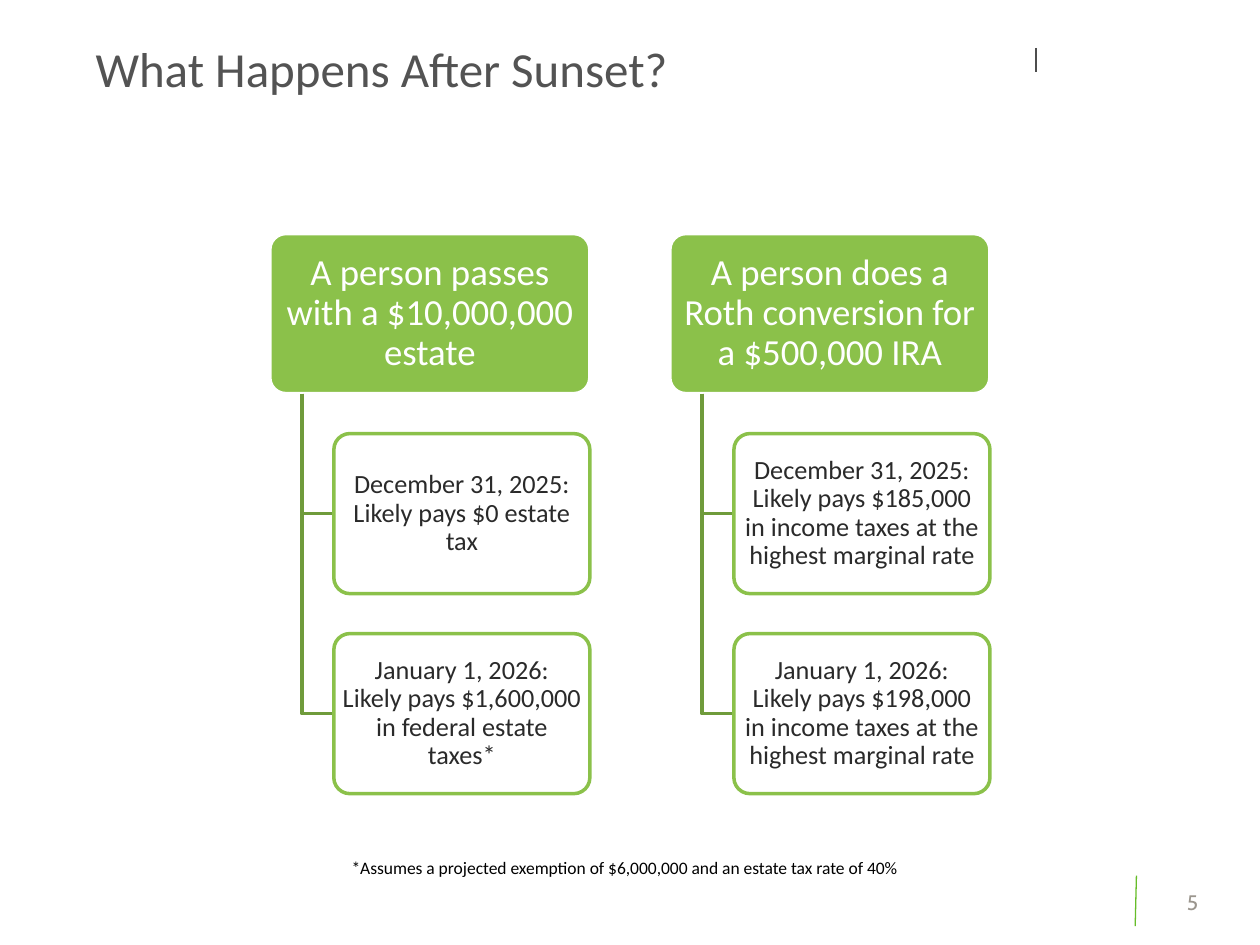
from dataclasses import dataclass

from lxml import etree
from pptx import Presentation
from pptx.dml.color import RGBColor
from pptx.enum import shapes, text
from pptx.oxml.ns import qn
from pptx.util import Pt


@dataclass(frozen=True)
class Theme:
    font: str = "Calibri"
    number_font: str = "Cabin"
    title: str = "535353"
    green: str = "8BC14A"
    branch: str = "6F9B3B"
    accent: str = "66BD29"
    rule: str = "4E4E4E"
    body: str = "2A2A2A"
    number: str = "9B968E"
    note: str = "000000"
    white: str = "FFFFFF"
    title_size: float = 28
    head_size: float = 21
    body_size: float = 15
    number_size: float = 12
    note_size: float = 10
    outline: float = 2
    hairline: float = 0.75


@dataclass(frozen=True)
class Box:
    left: float
    top: float
    width: float
    height: float

    def points(self) -> tuple:
        return tuple(Pt(v) for v in (self.left, self.top, self.width, self.height))


@dataclass(frozen=True)
class Style:
    size: float
    color: str
    font: str = Theme.font
    align: text.PP_ALIGN = text.PP_ALIGN.CENTER
    anchor: text.MSO_ANCHOR = text.MSO_ANCHOR.TOP
    spacing: float = 1.0
    inset_x: float = 3.6
    inset_y: float = 3.6
    wrap: bool = False


@dataclass(frozen=True)
class Scenario:
    heading: str
    outcomes: tuple[str, ...]


THEME = Theme()
MIDDLE = text.MSO_ANCHOR.MIDDLE
TITLE = Style(THEME.title_size, THEME.title, align=text.PP_ALIGN.LEFT,
              spacing=0.9, inset_x=7.2, wrap=True)
HEAD = Style(THEME.head_size, THEME.white, anchor=MIDDLE, spacing=0.9,
             inset_x=2.9, inset_y=2, wrap=True)
OUTCOME = Style(THEME.body_size, THEME.body, anchor=MIDDLE, spacing=0.9,
                inset_x=2.1, inset_y=1.4, wrap=True)
NUMBER = Style(THEME.number_size, THEME.number, font=THEME.number_font)
NOTE = Style(THEME.note_size, THEME.note, align=text.PP_ALIGN.LEFT)

# The tree is proportioned from the size of its first heading.
FIRST_HEAD = Box(154.2, 133.5, 182.88, 91.44)
PITCH = 1.25
BRANCH_INDENT = 0.1
OUTCOME_INDENT = 0.2

SCENARIOS = (
    Scenario("A person passes with a $10,000,000 estate", (
        "December 31, 2025:\vLikely pays $0 estate tax",
        "January 1, 2026:\vLikely pays $1,600,000 in federal estate taxes*",
    )),
    Scenario("A person does a Roth conversion for a $500,000 IRA", (
        "December 31, 2025:\vLikely pays $185,000 in income taxes at the highest marginal rate",
        "January 1, 2026:\vLikely pays $198,000 in income taxes at the highest marginal rate",
    )),
)


def rgb(color: str) -> RGBColor:
    return RGBColor.from_string(color)


def write(shape, words: str, style: Style) -> None:
    frame = shape.text_frame
    frame_format = {
        "word_wrap": style.wrap, "vertical_anchor": style.anchor,
        "margin_left": Pt(style.inset_x), "margin_right": Pt(style.inset_x),
        "margin_top": Pt(style.inset_y), "margin_bottom": Pt(style.inset_y),
    }
    for name, value in frame_format.items():
        setattr(frame, name, value)
    paragraph = frame.paragraphs[0]
    paragraph.text = words
    paragraph.alignment = style.align
    paragraph.line_spacing = style.spacing
    for run in paragraph.runs:
        for name, value in {"size": Pt(style.size), "name": style.font}.items():
            setattr(run.font, name, value)
        run.font.color.rgb = rgb(style.color)


def stroke(shape, color: str, width: float) -> None:
    shape.line.color.rgb = rgb(color)
    shape.line.width = Pt(width)


def add_label(slide, box: Box, words: str, style: Style) -> None:
    write(slide.shapes.add_textbox(*box.points()), words, style)


def add_card(slide, box: Box, words: str, style: Style, fill: str, line: str,
             opacity: int = 100) -> None:
    card = slide.shapes.add_shape(shapes.MSO_SHAPE.ROUNDED_RECTANGLE, *box.points())
    card.adjustments[0] = 0.1
    card.shadow.inherit = False
    card.fill.solid()
    card.fill.fore_color.rgb = rgb(fill)
    if opacity < 100:
        color = card.fill._xPr.find(f".//{qn('a:srgbClr')}")
        etree.SubElement(color, qn("a:alpha"), val=str(opacity * 1000))
    stroke(card, line, THEME.outline)
    write(card, words, style)


def add_branch(slide, x: float, top: float, bottom: float, end_x: float) -> None:
    """Draw an open elbow down from a heading and across to an outcome."""
    builder = slide.shapes.build_freeform(Pt(x), Pt(top))
    builder.add_line_segments([(Pt(x), Pt(bottom)), (Pt(end_x), Pt(bottom))], close=False)
    elbow = builder.convert_to_shape()
    elbow.shadow.inherit = False
    elbow.fill.background()
    stroke(elbow, THEME.branch, THEME.outline)


def add_rule(slide, start: tuple[float, float], end: tuple[float, float], color: str) -> None:
    rule = slide.shapes.add_connector(
        shapes.MSO_CONNECTOR.STRAIGHT, *(Pt(v) for v in start + end))
    stroke(rule, color, THEME.hairline)
    etree.SubElement(rule._element.spPr, qn("a:effectLst"))


def add_scenario(slide, scenario: Scenario, head: Box) -> None:
    add_card(slide, head, scenario.heading, HEAD, THEME.green, THEME.white)
    indent = OUTCOME_INDENT * head.width
    for row, words in enumerate(scenario.outcomes, start=1):
        outcome = Box(head.left + indent, head.top + row * PITCH * head.height,
                      head.width - indent, head.height)
        add_branch(slide, head.left + BRANCH_INDENT * head.width, head.top + head.height,
                   outcome.top + outcome.height / 2, outcome.left)
        add_card(slide, outcome, words, OUTCOME, THEME.white, THEME.green, opacity=90)


def main() -> None:
    deck = Presentation()
    deck.slide_width, deck.slide_height = Pt(720), Pt(540)
    slide = deck.slides.add_slide(deck.slide_layouts[6])

    add_rule(slide, (592, 27.4), (592, 41), THEME.rule)
    add_rule(slide, (649.4, 500.4), (648.7, 529.2), THEME.accent)
    add_label(slide, Box(47.5, 22.3, 650, 89.3), "What Happens After Sunset?", TITLE)
    for column, scenario in enumerate(SCENARIOS):
        left = FIRST_HEAD.left + column * PITCH * FIRST_HEAD.width
        add_scenario(slide, scenario,
                     Box(left, FIRST_HEAD.top, FIRST_HEAD.width, FIRST_HEAD.height))
    add_label(slide, Box(658, 504.7, 46.8, 28.8), "5", NUMBER)
    add_label(slide, Box(197.3, 486, 325.4, 19.4),
              "*Assumes a projected exemption of $6,000,000 and an estate tax rate of 40%", NOTE)
    deck.save("out.pptx")


if __name__ == "__main__":
    main()
